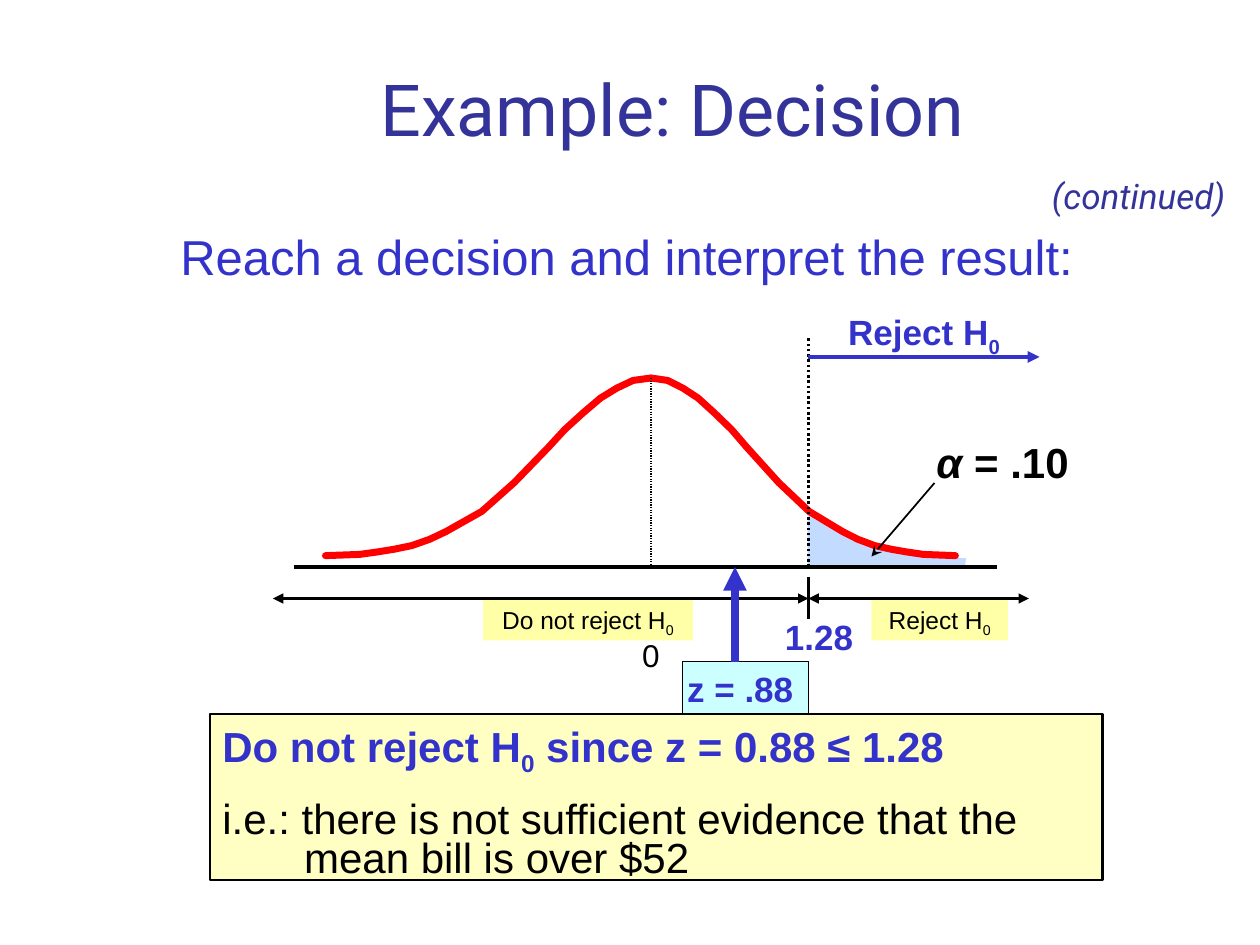
from lxml import etree
from pptx import Presentation
from pptx.dml.color import RGBColor
from pptx.enum import dml, shapes, text
from pptx.oxml.ns import qn
from pptx.util import Pt

BLACK, BLUE, NAVY, RED = "000000", "3333CC", "333399", "FF0000"
LABEL_FILL = "FFFFA7"
LEFT, CENTER = text.PP_ALIGN.LEFT, text.PP_ALIGN.CENTER

AXIS_Y, RANGE_Y = 324, 342
MEAN_X, CRITICAL_X, Z_X = 372, 462, 420

# Bell curve: share of the half width, height on the slide
BELL = [(1, 317.5), (.895, 316.8), (.84, 315.4), (.79, 313.9), (.735, 311.8),
        (.68, 308.2), (.63, 303.8), (.52, 292.3), (.42, 275.8), (.315, 255.6),
        (.265, 245.5), (.21, 236.2), (.155, 227.5), (.105, 221.8),
        (.055, 217.4), (0, 216)]
TAIL = [(551.5, 323.3), (552, 319), (523.4, 317.5), (504, 312.5), (486, 306),
        (461.5, 291.6), (461.5, AXIS_Y), (551.5, AXIS_Y)]


def rgb(value):
    return RGBColor.from_string(value)


def paint(sp, fill=None, line=None, width=0.75):
    sp.shadow.inherit = False
    if fill:
        sp.fill.solid()
        sp.fill.fore_color.rgb = rgb(fill)
    else:
        sp.fill.background()
    if line:
        sp.line.color.rgb = rgb(line)
        sp.line.width = Pt(width)
    else:
        sp.line.fill.background()


def add_box(s, x, y, w, h, **style):
    sp = s.shapes.add_shape(shapes.MSO_SHAPE.RECTANGLE, Pt(x), Pt(y), Pt(w), Pt(h))
    paint(sp, **style)
    sp.text_frame.vertical_anchor = text.MSO_ANCHOR.TOP
    return sp


def add_textbox(s, x, y, w, h, wrap=True):
    sp = s.shapes.add_textbox(Pt(x), Pt(y), Pt(w), Pt(h))
    sp.text_frame.word_wrap = wrap
    return sp


def write(p, content, size, color, font="Arial", bold=False, italic=False, align=CENTER):
    """Fill a paragraph; a part given as a tuple is a subscript."""
    p.alignment = align
    p.font.name, p.font.size = font, Pt(size)
    p.font.bold, p.font.italic = bold, italic
    p.font.color.rgb = rgb(color)
    for part in content:
        r = p.add_run()
        if isinstance(part, tuple):
            r.text = part[0]
            r.font._element.set("baseline", "-25000")
        else:
            r.text = part


def label(sp, content, size, color, **style):
    write(sp.text_frame.paragraphs[0], content, size, color, **style)


def add_line(s, x1, y1, x2, y2, color, width, head=None, tail=None, dotted=False):
    c = s.shapes.add_connector(shapes.MSO_CONNECTOR.STRAIGHT, Pt(x1), Pt(y1), Pt(x2), Pt(y2))
    c.line.color.rgb = rgb(color)
    c.line.width = Pt(width)
    if dotted:
        c.line.dash_style = dml.MSO_LINE.ROUND_DOT
    ln = c.line._get_or_add_ln()
    for tag, kind in (("a:headEnd", head), ("a:tailEnd", tail)):
        if kind:
            etree.SubElement(ln, qn(tag)).set("type", kind)
    etree.SubElement(c._element.spPr, qn("a:effectLst"))


def add_outline(s, points, closed=False, **style):
    pts = [(Pt(x), Pt(y)) for x, y in points]
    builder = s.shapes.build_freeform(*pts[0], scale=1.0)
    builder.add_line_segments(pts[1:], close=closed)
    sp = builder.convert_to_shape()
    paint(sp, **style)
    if not closed:
        sp.line._get_or_add_ln().set("cap", "rnd")


def add_headings(s):
    title = add_textbox(s, 78, 30, 613, 60)
    title.text_frame.vertical_anchor = text.MSO_ANCHOR.BOTTOM
    label(title, ["Example: Decision"], 41, NAVY, font="Roboto")
    label(add_textbox(s, 96, 126, 576, 48),
          ["Reach a decision and interpret the result:"], 28, BLUE, align=LEFT)
    label(add_textbox(s, 594, 96, 116, 31, wrap=False),
          ["(continued)"], 20, NAVY, font="Roboto", italic=True, align=LEFT)


def add_distribution(s):
    # Shaded tail, then the two halves of the curve
    add_outline(s, TAIL, closed=True, fill="C3DBFF")
    for half_width in (-186, 174):
        add_outline(s, [(MEAN_X + half_width * share, y) for share, y in BELL],
                    line=RED, width=4)

    # Axis, mean and critical value
    add_line(s, 168, AXIS_Y, 570, AXIS_Y, BLACK, 2)
    add_line(s, MEAN_X, 216, MEAN_X, AXIS_Y, BLACK, 0.75, dotted=True)
    add_line(s, CRITICAL_X, AXIS_Y, CRITICAL_X, 192, BLACK, 1.5, dotted=True)
    add_line(s, CRITICAL_X, 330, CRITICAL_X, 354, BLACK, 1.5)
    label(add_textbox(s, 354, 360, 36, 29), ["0"], 18, BLACK)
    label(add_textbox(s, 426, 348, 84, 31), ["1.28"], 20, BLUE, bold=True)

    # Significance level
    add_line(s, 534, 276, 498, 318, BLACK, 1, tail="stealth")
    alpha = add_textbox(s, 528, 246, 96, 36)
    label(alpha, ["α ", "= .10"], 24, BLACK, bold=True, align=LEFT)
    alpha.text_frame.paragraphs[0].runs[0].font.italic = True


def add_regions(s):
    # Decision ranges below the axis
    for x, w, words in ((498, 78, "Reject H"), (276, 120, "Do not reject H")):
        label(add_box(s, x, RANGE_Y, w, 24, fill=LABEL_FILL), [words, ("0",)], 14, BLACK)
    for x1, x2 in ((CRITICAL_X, 588), (156, CRITICAL_X)):
        add_line(s, x1, RANGE_Y, x2, RANGE_Y, BLACK, 1.5, head="triangle", tail="triangle")

    # Rejection region above the tail
    add_line(s, CRITICAL_X, 204, 594, 204, BLUE, 2.25, tail="triangle")
    label(add_textbox(s, 468, 174, 120, 31), ["Reject H", ("0",)], 20, BLUE, bold=True)


def add_statistic(s):
    add_box(s, 390, 378, 72, 30, fill="CCFFFF", line=BLACK)
    add_line(s, Z_X, 378, Z_X, AXIS_Y, BLUE, 4.5, tail="triangle")
    label(add_textbox(s, 378, 378, 90, 31), ["z = .88"], 20, BLUE, bold=True)


def add_conclusion(s):
    tf = add_box(s, 120, 408, 510, 95, fill="FFFFC3", line=BLACK, width=1.5).text_frame
    write(tf.paragraphs[0], ["Do not reject H", ("0",), " since z = 0.88 ≤ 1.28"],
          24, BLUE, bold=True, align=LEFT)
    for words, before, spacing, indent in (
            ("i.e.: there is not sufficient evidence that the", 14, 0.8, 0),
            ("mean bill is over $52", 0, 0.76, 46.7)):
        p = tf.add_paragraph()
        p.space_before, p.line_spacing = Pt(before), spacing
        p._p.get_or_add_pPr().set("marL", str(Pt(indent)))
        write(p, [words], 24, BLACK, align=LEFT)


def main():
    prs = Presentation()
    prs.slide_width, prs.slide_height = Pt(720), Pt(540)
    s = prs.slides.add_slide(prs.slide_layouts[6])
    add_headings(s)
    add_distribution(s)
    add_regions(s)
    add_conclusion(s)
    add_statistic(s)
    prs.save("out.pptx")


if __name__ == "__main__":
    main()
